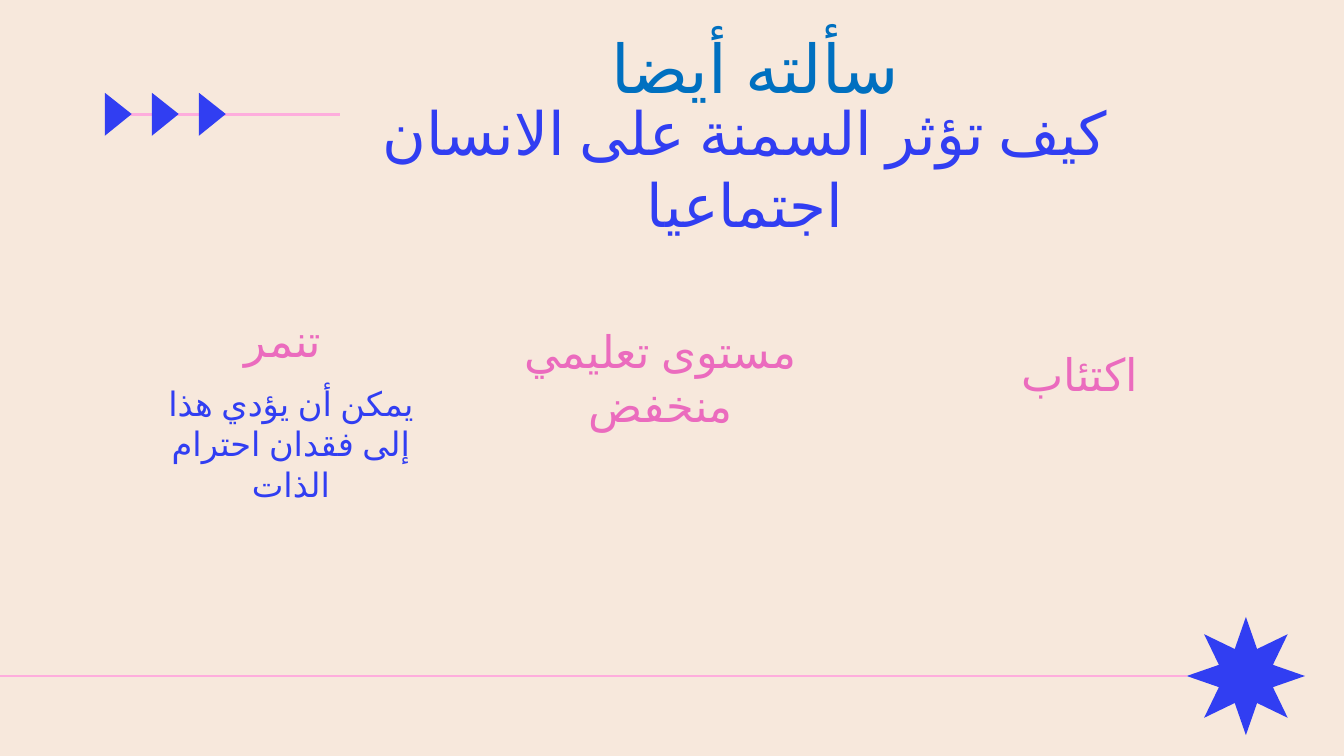
from dataclasses import dataclass

from lxml.etree import SubElement
from pptx import Presentation
from pptx.dml.color import RGBColor
from pptx.enum.lang import MSO_LANGUAGE_ID
from pptx.enum.shapes import MSO_CONNECTOR, MSO_SHAPE
from pptx.enum.text import MSO_ANCHOR, PP_ALIGN
from pptx.oxml.ns import qn
from pptx.util import Inches, Pt


@dataclass(frozen=True)
class Theme:
    background: str = "F7E8DC"
    blue: str = "313EF2"
    heading_blue: str = "0070C0"
    pink: str = "EB6BBE"
    line_pink: str = "FEADDD"
    heading_font: str = "Arial"
    title_font: str = "Roboto"
    body_font: str = "Lato"
    heading_size: int = 36
    title_size: int = 32
    label_size: int = 24
    body_size: int = 18
    line_width: float = 1.5


def write_text(frame, text, *, size, font, color, align=PP_ALIGN.CENTER):
    paragraph = frame.paragraphs[0]
    paragraph.alignment = align
    run = paragraph.add_run()
    run.text = text
    run.font.size = Pt(size)
    run.font.name = font
    run.font.language_id = MSO_LANGUAGE_ID.ARABIC
    run.font.color.rgb = RGBColor.from_string(color)
    # Arabic script takes its typeface from the complex-script entry.
    SubElement(run.font._element, qn("a:cs")).set("typeface", font)


class SlideBuilder:
    """Places elements on a grid of square cells, 100 columns wide."""

    UNIT = Inches(0.1)

    def __init__(self, slide, theme):
        self.slide = slide
        self.theme = theme
        fill = slide.background.fill
        fill.solid()
        fill.fore_color.rgb = RGBColor.from_string(theme.background)

    def grid(self, *lengths):
        return [round(length * self.UNIT) for length in lengths]

    def line(self, start, end):
        connector = self.slide.shapes.add_connector(
            MSO_CONNECTOR.STRAIGHT, *self.grid(*start, *end))
        connector.line.color.rgb = RGBColor.from_string(self.theme.line_pink)
        connector.line.width = Pt(self.theme.line_width)
        SubElement(connector._element.spPr, qn("a:effectLst"))

    def ornament(self, kind, box, adjustment):
        """Add a blue shape turned a quarter clockwise."""
        shape = self.slide.shapes.add_shape(kind, *self.grid(*box))
        shape.adjustments[0] = adjustment
        shape.rotation = 90
        shape.shadow.inherit = False
        shape.fill.solid()
        shape.fill.fore_color.rgb = RGBColor.from_string(self.theme.blue)
        shape.line.fill.background()

    def text(self, text, box, *, anchor=MSO_ANCHOR.TOP, inset=1, **text_format):
        frame = self.slide.shapes.add_textbox(*self.grid(*box)).text_frame
        frame.word_wrap = True
        frame.vertical_anchor = anchor
        frame.margin_left = frame.margin_right = self.grid(1)[0]
        frame.margin_top = frame.margin_bottom = self.grid(inset)[0]
        write_text(frame, text, **text_format)


def main():
    presentation = Presentation()
    presentation.slide_width = Inches(10)
    presentation.slide_height = presentation.slide_width * 9 // 16
    theme = Theme()
    slide = presentation.slides.add_slide(presentation.slide_layouts[6])
    builder = SlideBuilder(slide, theme)

    builder.ornament(MSO_SHAPE.STAR_8_POINT, (88.3, 45.9, 8.8, 8.8), 0.247)
    builder.line((88.3, 50.3), (0, 50.3))

    builder.line((7.8, 8.5), (25.3, 8.5))
    for index in range(3):
        builder.ornament(MSO_SHAPE.ISOSCELES_TRIANGLE,
                         (7.2 + 3.5 * index, 7.5, 3.2, 2), 0.495)

    builder.text("كيف تؤثر السمنة على الانسان اجتماعيا", (21.1, 6, 68.7, 13),
                 anchor=MSO_ANCHOR.MIDDLE, size=theme.title_size,
                 font=theme.title_font, color=theme.blue)
    builder.text("يمكن أن يؤدي هذا إلى فقدان احترام الذات", (9.8, 29.1, 23.7, 7.8),
                 anchor=MSO_ANCHOR.MIDDLE, size=theme.body_size,
                 font=theme.body_font, color=theme.blue)

    effects = [("تنمر", 9.2, 22.3),
               ("اكتئاب", 68.5, 24.8),
               ("مستوى تعليمي منخفض", 37.3, 23.1)]
    for label, column, row in effects:
        builder.text(label, (column, row, 23.7, 4.8), size=theme.label_size,
                     font=theme.title_font, color=theme.pink)

    builder.text("سألته أيضا", (44.5, 1.5, 30, 7.1), inset=0.5,
                 size=theme.heading_size, font=theme.heading_font,
                 color=theme.heading_blue, align=PP_ALIGN.LEFT)

    presentation.save("out.pptx")


if __name__ == "__main__":
    main()
